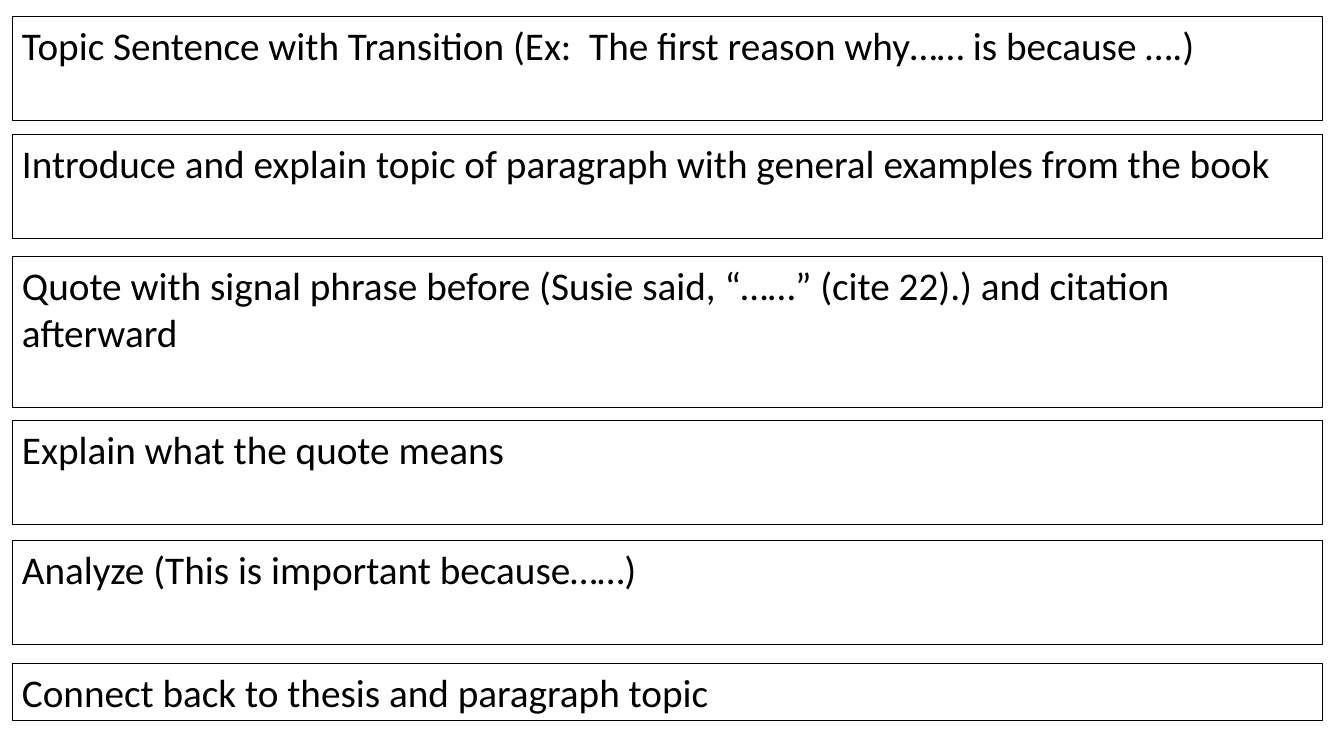
import pptx
import pptx.dml.color
import pptx.enum.text
import pptx.util

BLACK = pptx.dml.color.RGBColor(0x00, 0x00, 0x00)

LEFT, WIDTH = 0.009, 0.975  # shares of the slide width
ROWS = 16                   # one grid row is one line of text
PADDING = 0.21              # top and bottom insets together, in rows

# (top row, lines of room, prompt)
PROMPTS = [
    (0.34, 2, "Topic Sentence with Transition (Ex:  The first reason why…… is because ….)"),
    (2.84, 2, "Introduce and explain topic of paragraph with general examples from the book"),
    (5.42, 3, "Quote with signal phrase before (Susie said, “……” (cite 22).) and citation afterward"),
    (8.9, 2, "Explain what the quote means"),
    (11.43, 2, "Analyze (This is important because……)"),
    (14.04, 1, "Connect back to thesis and paragraph topic"),
]


class ParagraphPlan:
    font = {"name": "Calibri", "size": pptx.util.Pt(28)}
    frame = {"word_wrap": True,
             "auto_size": pptx.enum.text.MSO_AUTO_SIZE.NONE,
             "vertical_anchor": pptx.enum.text.MSO_ANCHOR.TOP}

    def __init__(self, prs):
        self.slide = prs.slides.add_slide(prs.slide_layouts[6])
        self.slide_width = prs.slide_width
        self.row = prs.slide_height / ROWS

    def prompt_box(self, top, lines, text):
        """Add an outlined box with room for the given number of lines."""
        sp = self.slide.shapes.add_textbox(
            int(LEFT * self.slide_width), int(top * self.row),
            int(WIDTH * self.slide_width), int((lines + PADDING) * self.row))
        sp.line.color.rgb = BLACK
        sp.line.width = pptx.util.Pt(0.75)
        tf = sp.text_frame
        for name, value in self.frame.items():
            setattr(tf, name, value)
        r = tf.paragraphs[0].add_run()
        r.text = text
        for name, value in self.font.items():
            setattr(r.font, name, value)
        r.font.color.rgb = BLACK


def main():
    prs = pptx.Presentation()
    prs.slide_width = pptx.util.Inches(13.33)
    prs.slide_height = pptx.util.Inches(7.5)
    plan = ParagraphPlan(prs)
    for top, lines, text in PROMPTS:
        plan.prompt_box(top, lines, text)
    prs.save("out.pptx")


if __name__ == "__main__":
    main()
